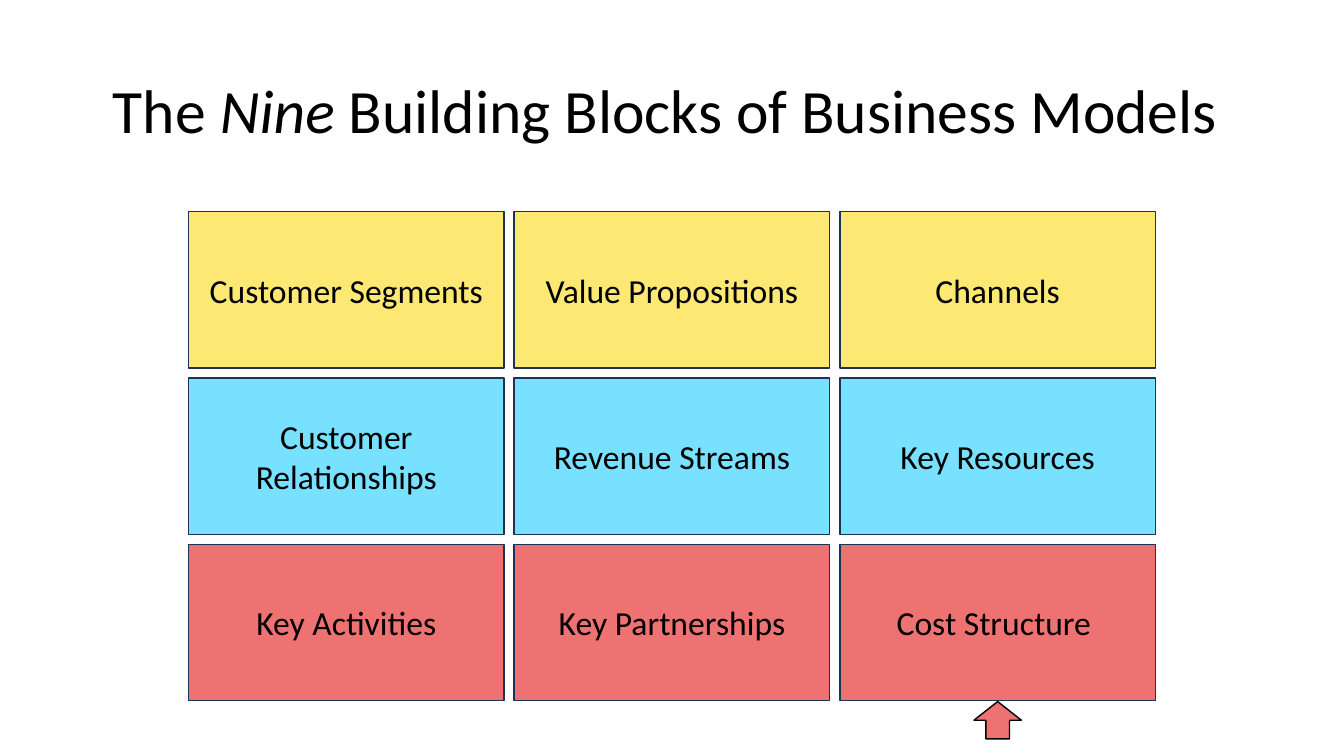
from pptx import Presentation, util as u
from pptx.dml.color import RGBColor
from pptx.enum import shapes, text

INK, EDGE = "000000", "1E3256"
ROWS = [
    ("FCE873", ["Customer Segments", "Value Propositions", "Channels"]),
    ("77E1FF", ["Customer Relationships", "Revenue Streams", "Key Resources"]),
    ("EF7273", ["Key Activities", "Key Partnerships", "Cost Structure "]),
]
LEFT, TOP = 1.87, 2.1
BLOCK_W, BLOCK_H = 3.13, 1.55
GAP = 0.1


def color(target, hex_code):
    """Give a fill or font color object an RGB value."""
    target.rgb = RGBColor.from_string(hex_code)


def box(left, top, width, height):
    return [u.Inches(v) for v in (left, top, width, height)]


def write(tf, runs, size, line_spacing=None):
    """Fill a frame with one centred paragraph of (words, italic) runs."""
    frame_format = {
        "word_wrap": True,
        "auto_size": text.MSO_AUTO_SIZE.NONE,
        "vertical_anchor": text.MSO_ANCHOR.MIDDLE,
    }
    for name, value in frame_format.items():
        setattr(tf, name, value)
    p = tf.paragraphs[0]
    p.alignment = text.PP_ALIGN.CENTER
    p.line_spacing = line_spacing
    for words, italic in runs:
        r = p.add_run()
        r.text = words
        font_format = {"name": "Calibri", "size": u.Pt(size), "italic": italic}
        for name, value in font_format.items():
            setattr(r.font, name, value)
        color(r.font.color, INK)


def add_title(s, runs):
    sp = s.shapes.title
    sp.left, sp.top, sp.width, sp.height = box(0.92, 0.4, 11.5, 1.45)
    write(sp.text_frame, runs, 44, 0.9)


def add_filled(s, kind, place, fill, edge):
    sp = s.shapes.add_shape(kind, *place)
    sp.shadow.inherit = False
    sp.fill.solid()
    color(sp.fill.fore_color, fill)
    color(sp.line.color, edge)
    sp.line.width = u.Pt(1)
    return sp


def add_block(s, col, row, fill, label):
    left = LEFT + col * (BLOCK_W + GAP)
    top = TOP + row * (BLOCK_H + GAP)
    place = box(left, top, BLOCK_W, BLOCK_H)
    sp = add_filled(s, shapes.MSO_SHAPE.RECTANGLE, place, fill, EDGE)
    write(sp.text_frame, [(label, False)], 24)


def add_pointer(s, fill):
    place = box(9.66, 6.96, 0.47, 0.37)
    sp = add_filled(s, shapes.MSO_SHAPE.DOWN_ARROW, place, fill, INK)
    sp.rotation = 180


def main():
    prs = Presentation()
    prs.slide_width, prs.slide_height = u.Inches(13.33), u.Inches(7.5)
    s = prs.slides.add_slide(prs.slide_layouts.get_by_name("Title Only"))
    add_title(s, [("The ", False), ("Nine", True),
                  (" Building Blocks of Business Models ", False)])
    for row, (fill, labels) in enumerate(ROWS):
        for col, label in enumerate(labels):
            add_block(s, col, row, fill, label)
    add_pointer(s, ROWS[-1][0])
    prs.save("out.pptx")


if __name__ == "__main__":
    main()
